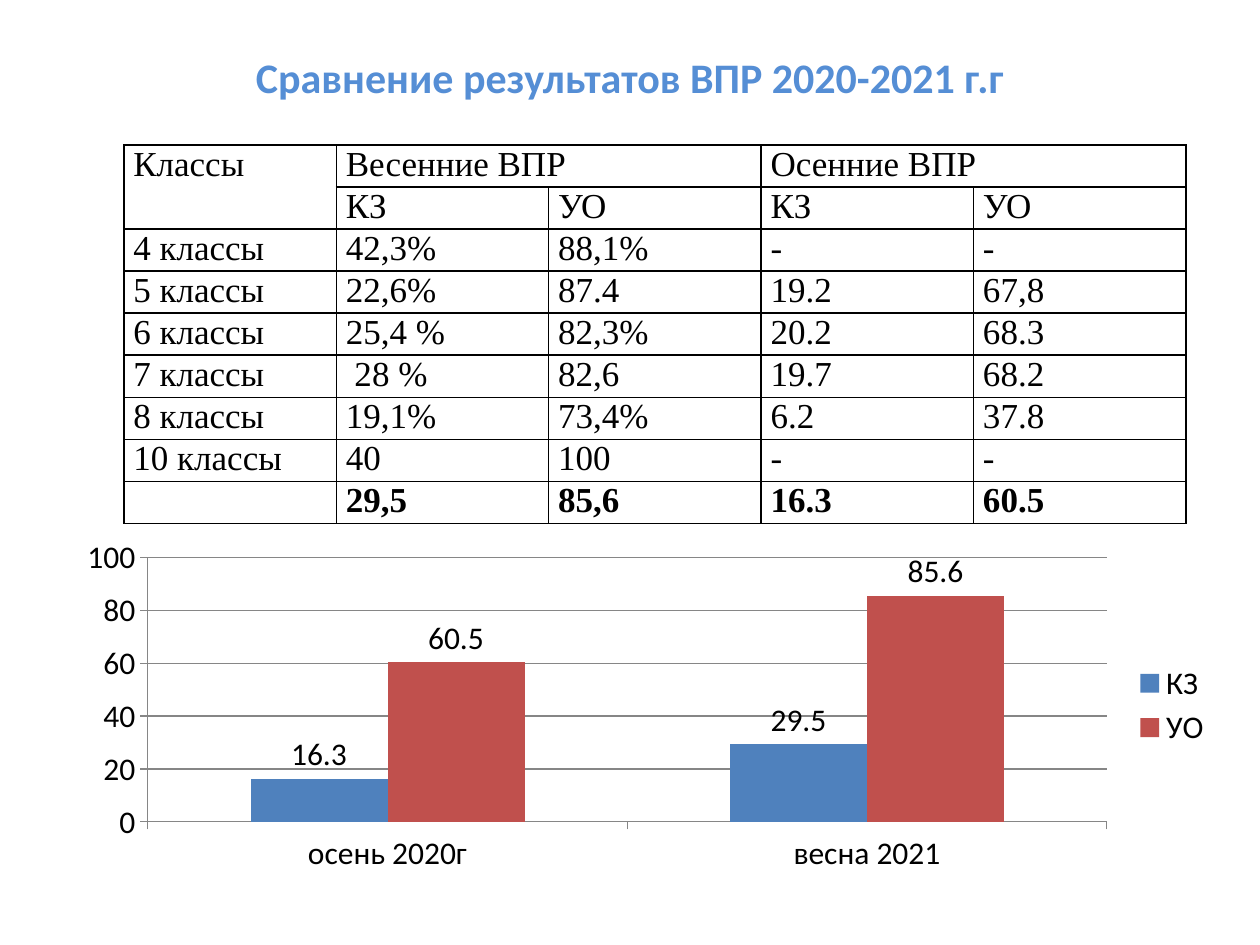
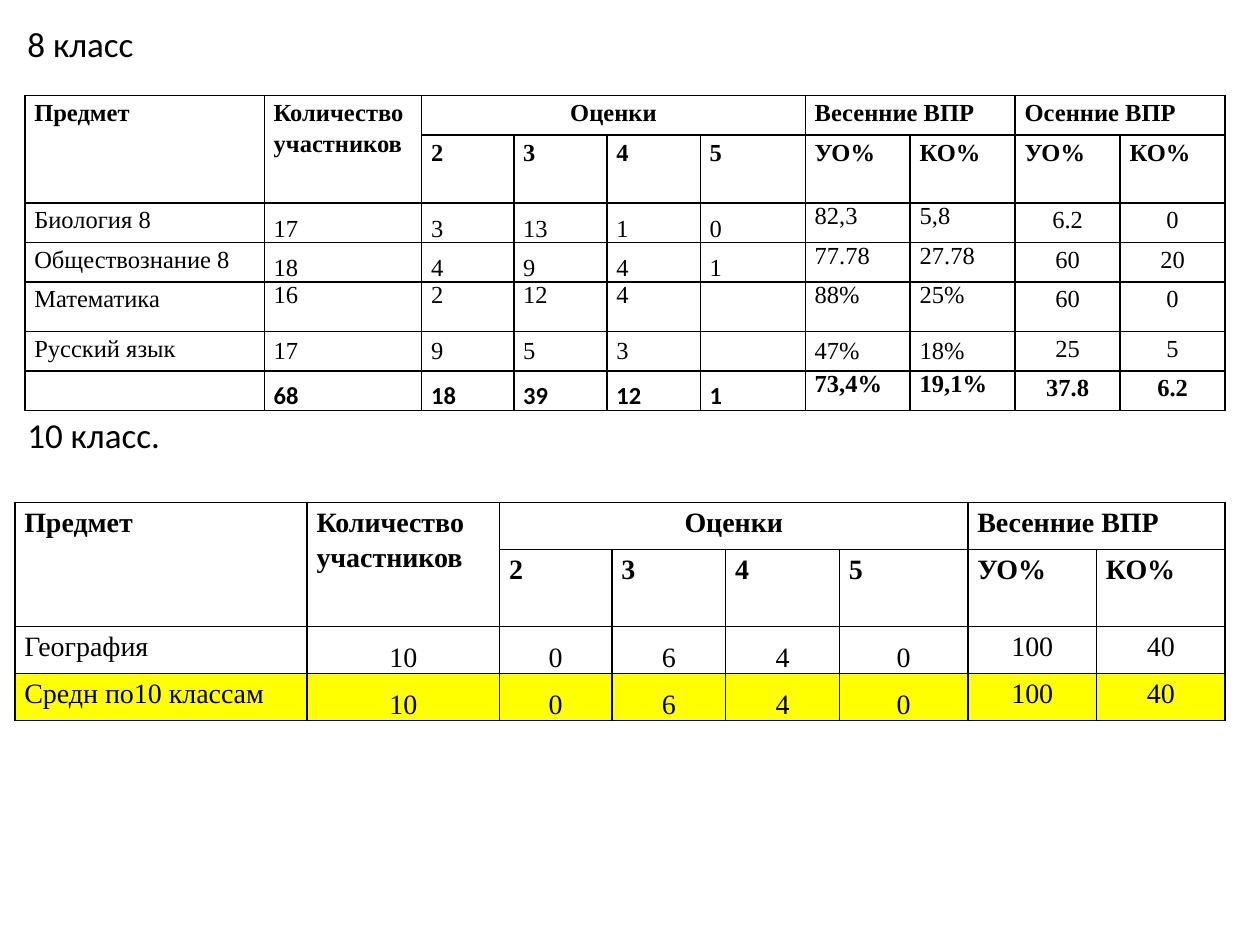
"""Builds two slides that compare school test results in tables and a chart."""
from lxml.etree import SubElement as Sub
from pptx import Presentation
from pptx.chart.data import CategoryChartData as Data
from pptx.dml.color import RGBColor as Rgb
from pptx.enum.chart import XL_CHART_TYPE as Kind, XL_LABEL_POSITION as Spot
from pptx.enum.chart import XL_LEGEND_POSITION as Side, XL_TICK_MARK as Tick
from pptx.enum.text import MSO_ANCHOR as Anchor, PP_ALIGN as Align
from pptx.oxml.ns import qn
from pptx.util import Pt

HUE = {"title": "558ED5", "ink": "000000", "mark": "FFFF00",
       "blue": "4F81BD", "red": "C0504D", "axis": "868686"}
SANS, SERIF = "Calibri", "Times New Roman"
LOOK = {
    "l": (Align.LEFT, Anchor.TOP, 1.0, SERIF),
    "m": (Align.LEFT, Anchor.MIDDLE, 1.0, SERIF),
    "b": (Align.LEFT, Anchor.BOTTOM, 1.0, SERIF),
    "k": (Align.LEFT, Anchor.BOTTOM, 1.0, SANS),
    "s": (Align.LEFT, Anchor.TOP, 1.15, SERIF),
    "j": (Align.JUSTIFY, Anchor.TOP, 1.15, SERIF),
    "c": (Align.CENTER, Anchor.TOP, 1.15, SERIF),
    "d": (Align.CENTER, Anchor.BOTTOM, 1.15, SERIF),
}


def write(para, text, size, font, bold=False, hue="ink"):
    """Add one styled run to a paragraph."""
    run = para.add_run()
    run.text = text
    run.font.size, run.font.name, run.font.bold = Pt(size), font, bold
    run.font.color.rgb = Rgb.from_string(HUE[hue])


def grid(slide, left, top, cols, size, rows, spans):
    """Add a ruled table; a row holds height, look codes, boldness and texts."""
    high = sum(row[0] for row in rows)
    table = slide.shapes.add_table(len(rows), len(cols), Pt(left), Pt(top),
                                   Pt(sum(cols)), Pt(high)).table
    table.first_row = table.horz_banding = False
    for col, width in zip(table.columns, cols):
        col.width = Pt(width)
    for line, (height, codes, bold, texts) in zip(table.rows, rows):
        line.height = Pt(height)
        for cell, code, text in zip(line.cells, codes, texts):
            cell.margin_left = cell.margin_right = Pt(5.4)
            cell.margin_top = cell.margin_bottom = 0
            props = cell._tc.get_or_add_tcPr()
            for edge in ("a:lnL", "a:lnR", "a:lnT", "a:lnB"):
                rule = Sub(props, qn(edge), w=str(Pt(1)))
                Sub(Sub(rule, qn("a:solidFill")), qn("a:srgbClr"), val=HUE["ink"])
            cell.fill.background()
            para = cell.text_frame.paragraphs[0]
            para.alignment, cell.vertical_anchor, para.line_spacing, font = LOOK[code]
            if text:
                write(para, text, size, font, bold)
    for row, col, down, over in spans:
        table.cell(row, col).merge(table.cell(row + down - 1, col + over - 1))
    return table


deck = Presentation()
deck.slide_width, deck.slide_height = Pt(720), Pt(540)
blank = deck.slide_layouts[6]

slide = deck.slides.add_slide(blank)
frame = slide.shapes.add_textbox(Pt(36), Pt(21.6), Pt(648), Pt(44)).text_frame
frame.word_wrap, frame.vertical_anchor = True, Anchor.MIDDLE
frame.paragraphs[0].alignment = Align.CENTER
write(frame.paragraphs[0], "Сравнение результатов ВПР 2020-2021 г.г", 24, SANS, True, "title")

years = [
    ("Классы", "Весенние ВПР", "", "Осенние ВПР", ""),
    ("", "КЗ", "УО", "КЗ", "УО"),
    ("4 классы", "42,3%", "88,1%", "-", "-"),
    ("5 классы", "22,6%", "87.4", "19.2", "67,8"),
    ("6 классы", "25,4 %", "82,3%", "20.2", "68.3"),
    ("7 классы", " 28 %", "82,6", "19.7", "68.2"),
    ("8 классы", "19,1%", "73,4%", "6.2", "37.8"),
    ("10 классы", "40", "100", "-", "-"),
    ("", "29,5", "85,6", "16.3", "60.5"),
]
grid(slide, 70.8, 82.8, [121.4] * 5, 20,
     [(23.35, "lllll", texts is years[-1], texts) for texts in years],
     [(0, 0, 2, 1), (0, 1, 1, 2), (0, 3, 1, 2)])

data = Data()
data.categories = ["осень 2020г", "весна 2021"]
data.add_series("КЗ", (16.3, 29.5))
data.add_series("УО", (60.5, 85.6))
chart = slide.shapes.add_chart(Kind.COLUMN_CLUSTERED, Pt(36.7), Pt(303.8),
                               Pt(663), Pt(198.7), data).chart
chart.has_title = False
chart.font.size, chart.font.name = Pt(18), SANS
chart.font.color.rgb = Rgb.from_string(HUE["ink"])
chart.has_legend = True
chart.legend.position, chart.legend.include_in_layout = Side.RIGHT, False
plot = chart.plots[0]
plot.gap_width, plot.overlap, plot.vary_by_categories = 150, 0, False
for series, hue in zip(plot.series, ("blue", "red")):
    series.format.fill.solid()
    series.format.fill.fore_color.rgb = Rgb.from_string(HUE[hue])
    series.data_labels.show_value = True
    series.data_labels.position = Spot.OUTSIDE_END
scale = chart.value_axis
scale.minimum_scale, scale.maximum_scale, scale.major_unit = 0, 100, 20
scale.has_major_gridlines = True
for axis in (scale, chart.category_axis):
    axis.major_tick_mark = Tick.OUTSIDE
    axis.format.line.color.rgb = Rgb.from_string(HUE["axis"])
scale.major_gridlines.format.line.color.rgb = Rgb.from_string(HUE["axis"])

slide = deck.slides.add_slide(blank)
frame = slide.shapes.add_textbox(Pt(8.6), Pt(9.4), Pt(702.7), Pt(521)).text_frame
frame.word_wrap = True
write(frame.paragraphs[0], "8 класс", 20, SANS)
para = frame.add_paragraph()
para.space_before = Pt(199.6)
write(para, "10 класс.", 20, SANS)

head = ("Предмет", "Количество участников", "Оценки", "", "", "", "Весенние ВПР", "")
marks = ("", "", "2", "3", "4", "5", "УО%", "КО%")
joins = [(0, 0, 2, 1), (0, 1, 2, 1), (0, 2, 1, 4), (0, 6, 1, 2)]

grid(slide, 14.2, 54.6, [136.8, 90, 52.6, 53.3, 53.3] + [60] * 5, 14, [
    (22.7, "sjcjjjjjjj", True, head + ("Осенние ВПР", "")),
    (35.4, "jjjjjjjjjj", True, marks + marks[-2:]),
    (22.6, "jbbbbbllcc", False,
     ("Биология 8", "17", "3", "13", "1", "0", "82,3", "5,8", "6.2", "0")),
    (22.6, "jbbbbbllcc", False,
     ("Обществознание 8", "18", "4", "9", "4", "1", "77.78", "27.78", "60", "20")),
    (28.4, "jlllllllcc", False,
     ("Математика", "16", "2", "12", "4", "", "88%", "25%", "60", "0")),
    (22.6, "jmmmmmmmcc", False,
     ("Русский язык", "17", "9", "5", "3", "", "47%", "18%", "25", "5")),
    (22.6, "lkkkkkllcc", True,
     ("", "68", "18", "39", "12", "1", "73,4%", "19,1%", "37.8", "6.2")),
], joins + [(0, 8, 1, 2)])

score = ("10", "0", "6", "4", "0", "100", "40")
table = grid(slide, 8.5, 287.1, [167, 110, 64.2, 65, 65] + [73.5] * 3, 16, [
    (26.9, "sjcjjjjj", True, head),
    (41.1, "jjjjjjjj", True, marks),
    (26.9, "jdddddcc", False, ("География",) + score),
    (26.9, "jdddddcc", False, ("Средн по10 классам",) + score),
], joins)
for cell in table.rows[3].cells:
    cell.fill.solid()
    cell.fill.fore_color.rgb = Rgb.from_string(HUE["mark"])

deck.save("out.pptx")
